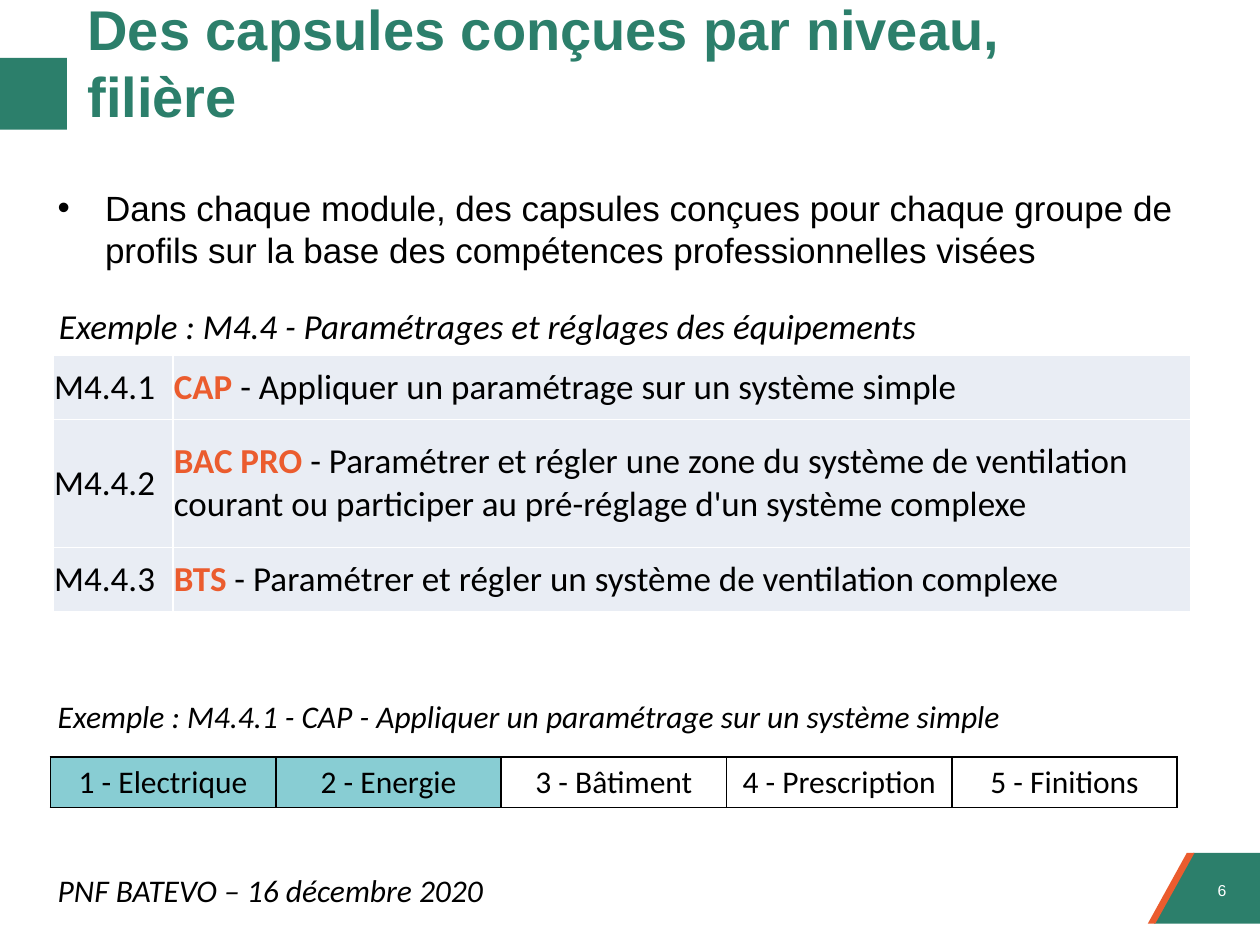
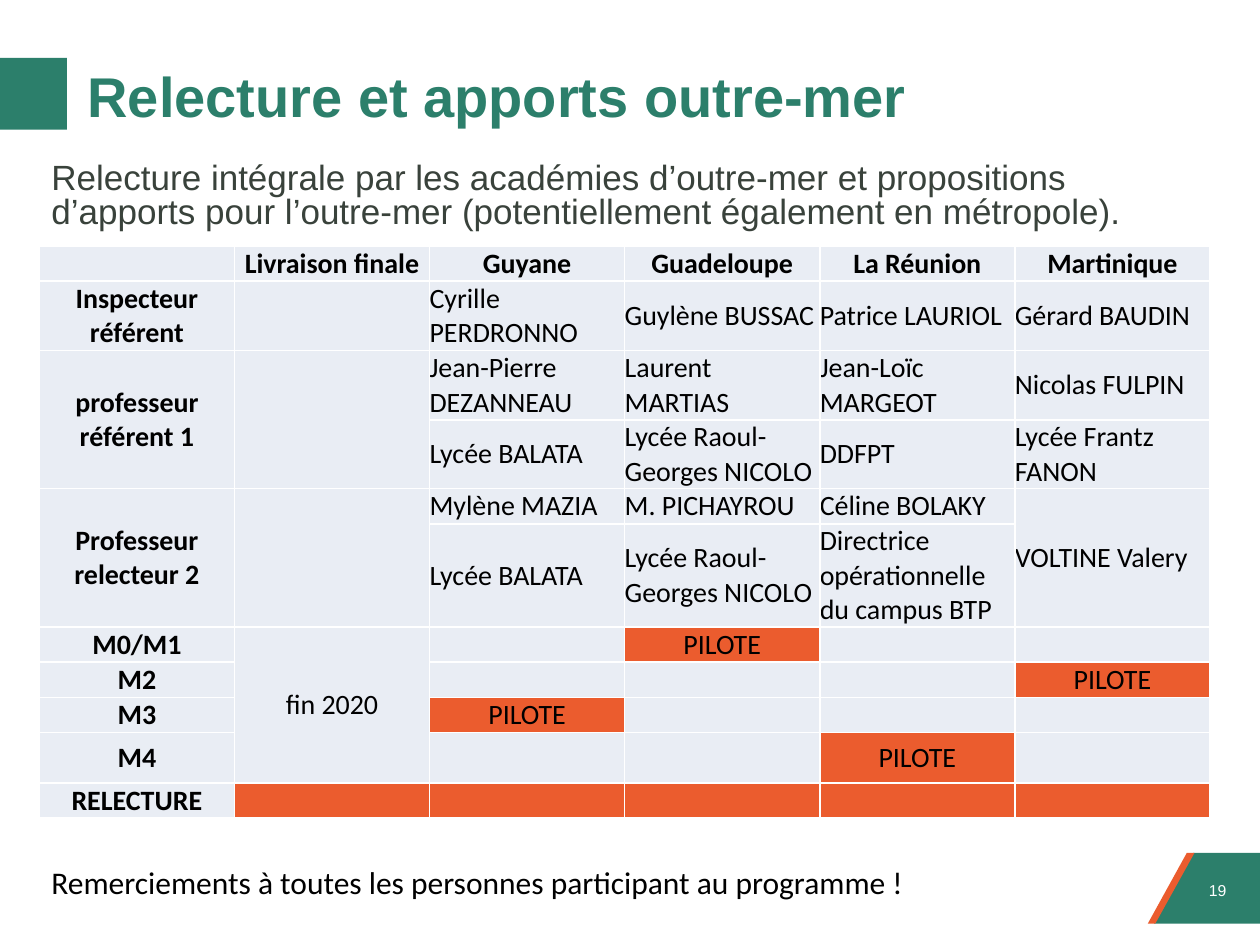
from lxml import etree
from pptx import Presentation
from pptx.dml.color import RGBColor
from pptx.enum import shapes, text
from pptx.oxml import ns
from pptx.util import Pt

GREEN = RGBColor(0x2C, 0x7F, 0x6B)
ORANGE = RGBColor(0xEB, 0x5C, 0x2E)
TEAL = RGBColor(0x88, 0xCD, 0xD3)
PALE = RGBColor(0xE9, 0xED, 0xF4)
SLATE = RGBColor(0x39, 0x42, 0x3B)
BLACK = RGBColor(0, 0, 0)
WHITE = RGBColor(0xFF, 0xFF, 0xFF)

LEFT, CENTER, RIGHT = text.PP_ALIGN.LEFT, text.PP_ALIGN.CENTER, text.PP_ALIGN.RIGHT


class Deck:
    heading_font = "Arial"
    body_font = "Calibri"

    def __init__(self):
        self.presentation = Presentation()
        self.presentation.slide_width = Pt(720)
        self.presentation.slide_height = Pt(540)
        self.slide = None

    def new_slide(self, title, number):
        self.slide = self.presentation.slides.add_slide(self.presentation.slide_layouts[6])
        self.polygon([(659.5, 527.8), (681.8, 487.4), (720, 487.4), (720, 527.8)], GREEN)
        self.polygon([(682.6, 487.4), (660.2, 527.8), (655.9, 527.8), (678.2, 487.4)], ORANGE)
        self.text_box(number, 682.6, 499.7, 25.2, 18, 9, self.heading_font, WHITE, align=RIGHT)
        band = self.slide.shapes.add_shape(
            shapes.MSO_SHAPE.RECTANGLE, Pt(0), Pt(33.1), Pt(38.2), Pt(41))
        self.paint(band, GREEN)
        title_frame = self.text_box(
            title, 44.6, 31, 630, 46, 32, self.heading_font, GREEN, bold=True)
        title_frame.vertical_anchor = text.MSO_ANCHOR.BOTTOM
        title_frame.margin_left, title_frame.margin_right = Pt(5.4), Pt(16)

    def paint(self, shape, color):
        shape.shadow.inherit = False
        shape.fill.solid()
        shape.fill.fore_color.rgb = color
        shape.line.fill.background()

    def polygon(self, points, color):
        corners = [(Pt(x), Pt(y)) for x, y in points]
        builder = self.slide.shapes.build_freeform(*corners[0])
        builder.add_line_segments(corners[1:], close=True)
        self.paint(builder.convert_to_shape(), color)

    def format_run(self, run, size, font, color, bold=False, italic=False):
        run.font.size = Pt(size)
        run.font.name = font
        run.font.color.rgb = color
        run.font.bold = bold
        run.font.italic = italic

    def text_box(self, content, left, top, width, height, size, font=body_font,
                 color=BLACK, align=LEFT, bold=False, italic=False):
        frame = self.slide.shapes.add_textbox(
            Pt(left), Pt(top), Pt(width), Pt(height)).text_frame
        frame.word_wrap = True
        frame.text = content
        paragraph = frame.paragraphs[0]
        paragraph.alignment = align
        self.format_run(paragraph.runs[0], size, font, color, bold, italic)
        return frame

    def bullet(self, paragraph, indent):
        properties = paragraph._p.get_or_add_pPr()
        properties.set("marL", str(Pt(indent)))
        properties.set("indent", str(-Pt(indent)))
        etree.SubElement(properties, ns.qn("a:buFont"), typeface=self.heading_font)
        etree.SubElement(properties, ns.qn("a:buChar"), char="•")

    def table(self, left, top, widths, heights, border):
        table = self.slide.shapes.add_table(
            len(heights), len(widths), Pt(left), Pt(top),
            Pt(sum(widths)), Pt(sum(heights))).table
        table.first_row = table.horz_banding = False
        for column, width in zip(table.columns, widths):
            column.width = Pt(width)
        for row, height in zip(table.rows, heights):
            row.height = Pt(height)
        for cell in table.iter_cells():
            self.cell_border(cell, border)
        return table

    def cell_border(self, cell, color):
        properties = cell._tc.get_or_add_tcPr()
        for side in ("lnL", "lnR", "lnT", "lnB"):
            line = etree.SubElement(properties, ns.qn(f"a:{side}"), w=str(Pt(1)))
            fill = etree.SubElement(line, ns.qn("a:solidFill"))
            etree.SubElement(fill, ns.qn("a:srgbClr"), val=str(color))

    def fill_cell(self, cell, content, size, fill, align=LEFT, bold=False, lead="", margin=0):
        if fill is None:
            cell.fill.background()
        else:
            cell.fill.solid()
            cell.fill.fore_color.rgb = fill
        cell.vertical_anchor = text.MSO_ANCHOR.MIDDLE
        cell.margin_left = cell.margin_right = cell.margin_top = cell.margin_bottom = Pt(margin)
        cell.text_frame.text = content
        for paragraph in cell.text_frame.paragraphs:
            paragraph.alignment = align
            for run in paragraph.runs:
                self.format_run(run, size, self.body_font, BLACK, bold)
            if not paragraph.runs:
                paragraph._p.get_or_add_endParaRPr().set("sz", str(size * 100))
        if lead:
            paragraph = cell.text_frame.paragraphs[0]
            paragraph.runs[0].text = lead
            self.format_run(paragraph.runs[0], size, self.body_font, ORANGE, True)
            rest = paragraph.add_run()
            rest.text = content
            self.format_run(rest, size, self.body_font, BLACK)


def build_capsules(deck):
    deck.new_slide("Des capsules conçues par niveau, filière", "6")
    frame = deck.text_box(
        "Dans chaque module, des capsules conçues pour chaque groupe de profils "
        "sur la base des compétences professionnelles visées",
        25.9, 103, 668.2, 60, 20, deck.heading_font)
    deck.bullet(frame.paragraphs[0], 27)
    deck.text_box("Exemple : M4.4 - Paramétrages et réglages des équipements",
                  26.6, 170.6, 654.5, 31.7, 20, italic=True)

    capsules = [
        ("M4.4.1", "CAP", " - Appliquer un paramétrage sur un système simple"),
        ("M4.4.2", "BAC PRO ", "- Paramétrer et régler une zone du système de ventilation "
         "courant ou participer au pré-réglage d'un système complexe"),
        ("M4.4.3", "BTS ", "- Paramétrer et régler un système de ventilation complexe"),
    ]
    levels = deck.table(30.4, 203, [68.4, 581.8], [36.6, 73.2, 36.6], WHITE)
    for row, (code, level, goal) in enumerate(capsules):
        deck.fill_cell(levels.cell(row, 0), code, 20, PALE, margin=0.6)
        deck.fill_cell(levels.cell(row, 1), goal, 20, PALE, lead=level, margin=0.6)

    deck.text_box("Exemple : M4.4.1 - CAP - Appliquer un paramétrage sur un système simple",
                  25.9, 394.6, 621.4, 29, 18, italic=True)
    fields = ["Electrique", "Energie", "Bâtiment", "Prescription", "Finitions"]
    strip = deck.table(28.8, 432.6, [128.8] * len(fields), [28.8], BLACK)
    for column, field in enumerate(fields):
        deck.fill_cell(strip.cell(0, column), f"{column + 1} - {field}", 18,
                       TEAL if column < 2 else None, CENTER, margin=3.4)
    deck.text_box("PNF BATEVO – 16 décembre 2020", 25.9, 494.4, 290, 29, 18, italic=True)


def build_review(deck):
    deck.new_slide("Relecture et apports outre-mer", "19")
    rows = [
        ["", "Livraison finale", "Guyane", "Guadeloupe", "La Réunion", "Martinique"],
        ["Inspecteur référent", "", "Cyrille PERDRONNO", "Guylène BUSSAC",
         "Patrice LAURIOL", "Gérard BAUDIN"],
        ["professeur référent 1", "", "Jean-Pierre DEZANNEAU", "Laurent MARTIAS",
         "Jean-Loïc MARGEOT", "Nicolas FULPIN"],
        ["", "", "Lycée BALATA", "Lycée Raoul-Georges NICOLO", "DDFPT", "Lycée Frantz FANON"],
        ["Professeur relecteur 2", "", "Mylène MAZIA", "M. PICHAYROU",
         "Céline BOLAKY", "VOLTINE Valery"],
        ["", "", "Lycée BALATA", "Lycée Raoul-Georges NICOLO",
         "Directrice opérationnelle\ndu campus BTP", ""],
        ["M0/M1", "fin 2020", "", "PILOTE", "", ""],
        ["M2", "", "", "", "", "PILOTE"],
        ["M3", "", "PILOTE", "", "", ""],
        ["M4", "", "", "", "PILOTE", ""],
        ["RELECTURE", "", "", "", "", ""],
    ]
    heights = [19.9, 39.7, 39.7, 39.2, 20.2, 58.9, 20.1, 20.1, 20.1, 28.8, 20.1]
    review = deck.table(22.5, 140.8, [111.5] * 6, heights, WHITE)
    last_row = len(rows) - 1
    for row, contents in enumerate(rows):
        for column, content in enumerate(contents):
            heading = row == 0 or column == 0
            pilot = content == "PILOTE" or (row == last_row and column > 0)
            centered = heading or pilot or column == 1
            deck.fill_cell(review.cell(row, column), content, 16,
                           ORANGE if pilot else PALE, CENTER if centered else LEFT, heading)
    for first, last, column in [(2, 3, 0), (2, 3, 1), (4, 5, 0), (4, 5, 1), (4, 5, 5), (6, 9, 1)]:
        review.cell(first, column).merge(review.cell(last, column))

    frame = deck.text_box(
        "Relecture intégrale par les académies d’outre-mer et propositions d’apports "
        "pour l’outre-mer (potentiellement également en métropole).",
        22.3, 90, 653, 51, 20, deck.heading_font, SLATE)
    frame.paragraphs[0].line_spacing = 0.8
    deck.text_box("Remerciements à toutes les personnes participant au programme !",
                  22.3, 489.6, 568.8, 29, 18)


def main():
    deck = Deck()
    build_capsules(deck)
    build_review(deck)
    deck.presentation.save("out.pptx")


if __name__ == "__main__":
    main()
